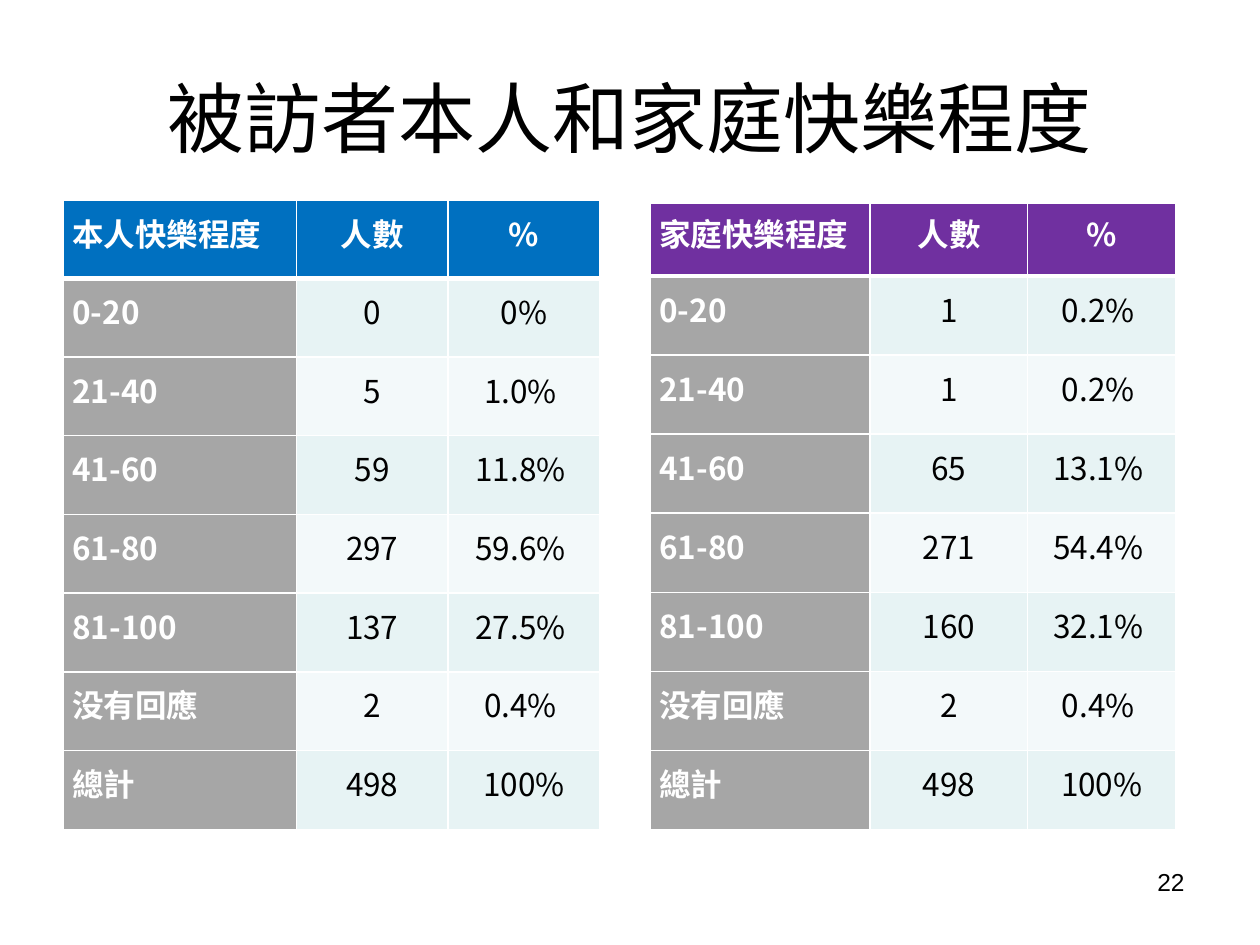
"""Build a slide comparing personal and family happiness levels in two tables."""
from lxml.etree import SubElement
from pptx import Presentation
from pptx.dml.color import RGBColor
from pptx.enum.text import MSO_ANCHOR as Anchor, PP_ALIGN as Align
from pptx.oxml.ns import qn
from pptx.util import Pt

COLORS = {"white": "FFFFFF", "black": "000000", "blue": "0070C0", "purple": "7030A0",
          "gray": "A6A6A6", "tint": "E7F3F4", "pale": "F3F9FA"}
CJK = "Noto Sans CJK SC"
LEVELS = ["0-20", "21-40", "41-60", "61-80", "81-100", "没有回應", "總計"]
PERSONAL = [("0", "0%"), ("5", "1.0% "), ("59", "11.8% "), ("297", "59.6% "),
            ("137", "27.5% "), ("2", "0.4% "), ("498", "100%")]
FAMILY = [("1", "0.2% "), ("1", "0.2% "), ("65", "13.1% "), ("271", "54.4% "),
          ("160", "32.1% "), ("2", "0.4% "), ("498", "100%")]


def rgb(name):
    return RGBColor.from_string(COLORS[name])


def add_run(para, text, size, color="black", bold=False, font=CJK):
    span = para.add_run()
    span.text = text
    span.font.size = Pt(size)
    span.font.bold = bold
    span.font.color.rgb = rgb(color)
    span.font.name = font
    SubElement(span.font._element, qn("a:ea"), typeface=font)


def add_title(page, text):
    title = page.shapes.title
    title.left, title.top, title.width, title.height = Pt(36), Pt(21.6), Pt(648), Pt(90)
    title.text_frame.vertical_anchor = Anchor.MIDDLE
    para = title.text_frame.paragraphs[0]
    para.alignment = Align.CENTER
    add_run(para, text, 44)


def set_borders(cell, top=1, bottom=1):
    properties = cell._tc.get_or_add_tcPr()
    for side, width in (("L", 1), ("R", 1), ("T", top), ("B", bottom)):
        line = SubElement(properties, qn(f"a:ln{side}"), w=str(Pt(width)))
        fill = SubElement(line, qn("a:solidFill"))
        SubElement(fill, qn("a:srgbClr"), val=COLORS["white"])


def format_cell(cell, text, row, column, accent):
    heading = row == 0 or column == 0
    set_borders(cell, top=3 if row == 1 else 1, bottom=3 if row == 0 else 1)
    cell.fill.solid()
    body_fill = "gray" if column == 0 else ("tint" if row % 2 else "pale")
    cell.fill.fore_color.rgb = rgb(accent if row == 0 else body_fill)
    cell.margin_left = cell.margin_right = Pt(5)
    cell.margin_top = cell.margin_bottom = Pt(0)
    cell.vertical_anchor = Anchor.MIDDLE
    para = cell.text_frame.paragraphs[0]
    para.alignment = Align.CENTER if column else Align.LEFT
    para.line_spacing = Pt(18)
    para.space_after = Pt(6)
    add_run(para, text, 18, "white" if heading else "black", heading)


def add_happiness_table(page, heading, results, accent, left, top, widths, heights):
    header_height, body_height = heights
    rows = [(heading, "人數", "%")]
    rows += [(level, *result) for level, result in zip(LEVELS, results)]
    total_height = header_height + body_height * len(LEVELS)
    table = page.shapes.add_table(len(rows), len(widths), Pt(left), Pt(top),
                                  Pt(sum(widths)), Pt(total_height)).table
    for column, width in zip(table.columns, widths):
        column.width = Pt(width)
    for row_index, texts in enumerate(rows):
        table.rows[row_index].height = Pt(body_height if row_index else header_height)
        for column_index, text in enumerate(texts):
            format_cell(table.cell(row_index, column_index), text,
                        row_index, column_index, accent)


def add_page_number(page, number):
    box = page.shapes.add_textbox(Pt(516), Pt(491.8), Pt(168), Pt(37.5))
    box.text_frame.word_wrap = True
    para = box.text_frame.paragraphs[0]
    para.alignment = Align.RIGHT
    add_run(para, number, 14, font="Arial")


def main():
    deck = Presentation()
    deck.slide_width, deck.slide_height = Pt(720), Pt(540)
    page = deck.slides.add_slide(deck.slide_layouts[5])
    add_title(page, "被訪者本人和家庭快樂程度")
    add_happiness_table(page, "本人快樂程度", PERSONAL, "blue", 36.3, 114.6,
                        (133, 86.8, 86.8), (44.4, 45))
    add_happiness_table(page, "家庭快樂程度", FAMILY, "purple", 371.7, 115.9,
                        (125.6, 90, 84.6), (41.8, 45.2))
    add_page_number(page, "22")
    deck.save("out.pptx")


if __name__ == "__main__":
    main()
